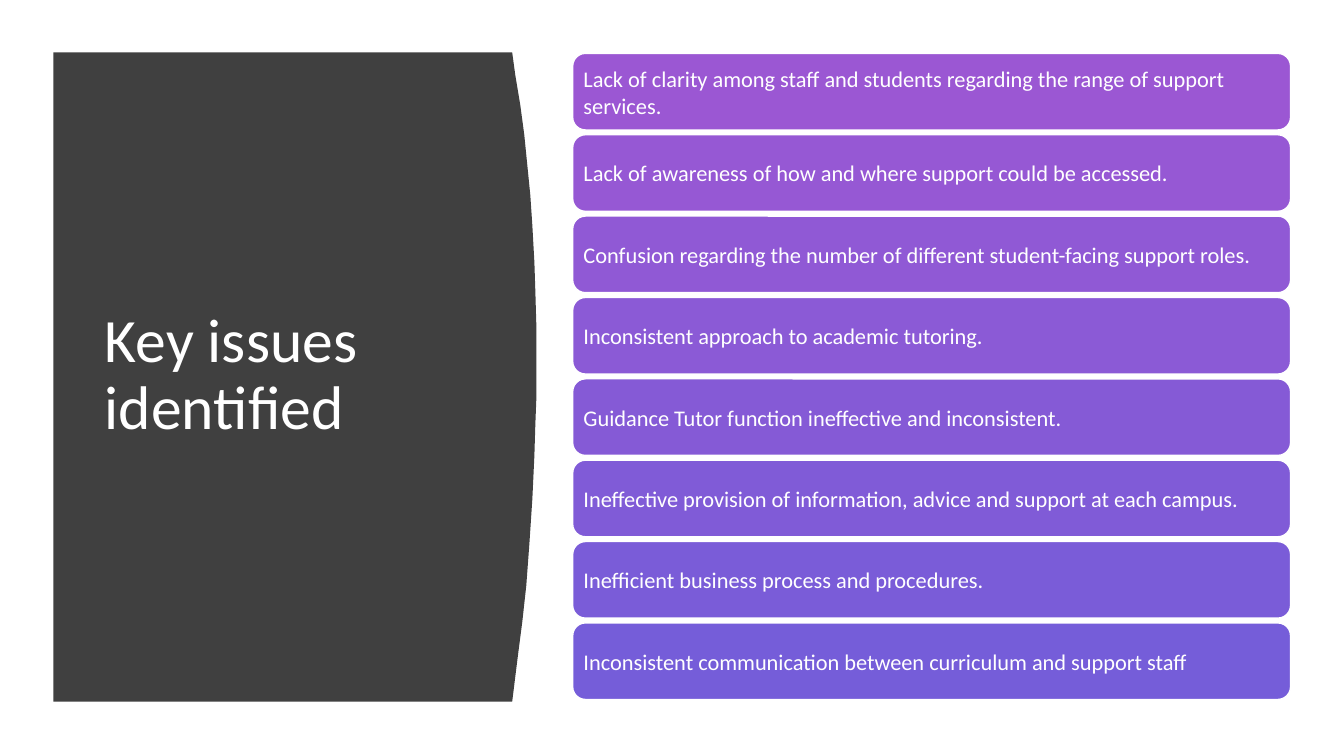
from pptx import Presentation
from pptx.dml.color import RGBColor
from pptx.enum.shapes import MSO_SHAPE
from pptx.enum.text import MSO_ANCHOR, MSO_AUTO_SIZE, PP_ALIGN
from pptx.util import Inches, Pt

FONT = "Calibri"
WHITE = "FFFFFF"
PANEL_FILL = "404040"
TITLE = "Key issues identified"
ISSUES = [
    ("Lack of clarity among staff and students regarding the range of support services.", "9B57D3"),
    ("Lack of awareness of how and where support could be accessed.", "9658D4"),
    ("Confusion regarding the number of different student-facing support roles.", "9059D5"),
    ("Inconsistent approach to academic tutoring.", "8B5AD6"),
    ("Guidance Tutor function ineffective and inconsistent.", "855AD6"),
    ("Ineffective provision of information, advice and support at each campus.", "805BD7"),
    ("Inefficient business process and procedures.", "7A5CD8"),
    ("Inconsistent communication between curriculum and support staff", "755DD9"),
]

PANEL_LEFT, PANEL_TOP, PANEL_BOTTOM = 0.53, 0.52, 6.96
PANEL_CURVE = [
    (5.08, PANEL_TOP), (5.11, 0.74), (5.16, 1.04), (5.2, 1.34), (5.23, 1.64),
    (5.26, 1.94), (5.28, 2.24), (5.3, 2.6), (5.31, 2.9), (5.32, 3.25),
    (5.32, 3.94), (5.31, 4.2), (5.3, 4.52), (5.28, 4.95), (5.25, 5.4),
    (5.22, 5.81), (5.18, 6.17), (5.14, 6.48), (5.11, 6.72), (5.08, PANEL_BOTTOM),
]
BAR_LEFT, BAR_TOP, BAR_WIDTH, BAR_HEIGHT = 5.68, 0.53, 7.12, 0.76
BAR_PITCH = (6.18 - BAR_TOP) / (len(ISSUES) - 1)
BAR_INSET = Inches(0.07)


def color(hex_code):
    return RGBColor.from_string(hex_code)


def paint(shape, fill):
    shape.shadow.inherit = False
    shape.fill.solid()
    shape.fill.fore_color.rgb = color(fill)


def write(frame, text, size):
    """Put one left-aligned white paragraph, centred vertically, in the frame."""
    frame.text = text
    frame.word_wrap = True
    frame.auto_size = MSO_AUTO_SIZE.NONE
    frame.vertical_anchor = MSO_ANCHOR.MIDDLE
    paragraph = frame.paragraphs[0]
    paragraph.alignment = PP_ALIGN.LEFT
    paragraph.font.name = FONT
    paragraph.font.size = Pt(size)
    paragraph.font.color.rgb = color(WHITE)
    return paragraph


def add_panel(shapes):
    outline = shapes.build_freeform(
        Inches(PANEL_LEFT), Inches(PANEL_TOP), scale=1.0)
    edge = PANEL_CURVE + [(PANEL_LEFT, PANEL_BOTTOM)]
    outline.add_line_segments([(Inches(x), Inches(y)) for x, y in edge], close=True)
    panel = outline.convert_to_shape()
    paint(panel, PANEL_FILL)
    panel.line.fill.background()


def add_title(shapes):
    title = shapes.title
    title.left, title.top = Inches(0.94), Inches(1.11)
    title.width, title.height = Inches(3.74), Inches(5.24)
    write(title.text_frame, TITLE, 44).line_spacing = 0.9
    shapes._spTree.append(title._element)  # bring the title in front of the panel


def add_issue(shapes, row, text, fill):
    bar = shapes.add_shape(
        MSO_SHAPE.ROUNDED_RECTANGLE,
        Inches(BAR_LEFT), Inches(BAR_TOP + row * BAR_PITCH),
        Inches(BAR_WIDTH), Inches(BAR_HEIGHT))
    paint(bar, fill)
    bar.line.color.rgb = color(WHITE)
    bar.line.width = Pt(1)
    frame = bar.text_frame
    frame.margin_left = frame.margin_right = BAR_INSET
    frame.margin_top = frame.margin_bottom = BAR_INSET
    write(frame, text, 16)


def main():
    deck = Presentation()
    deck.slide_width, deck.slide_height = Inches(13.33), Inches(7.5)
    shapes = deck.slides.add_slide(deck.slide_layouts[5]).shapes
    add_panel(shapes)
    add_title(shapes)
    for row, (text, fill) in enumerate(ISSUES):
        add_issue(shapes, row, text, fill)
    deck.save("out.pptx")


if __name__ == "__main__":
    main()
